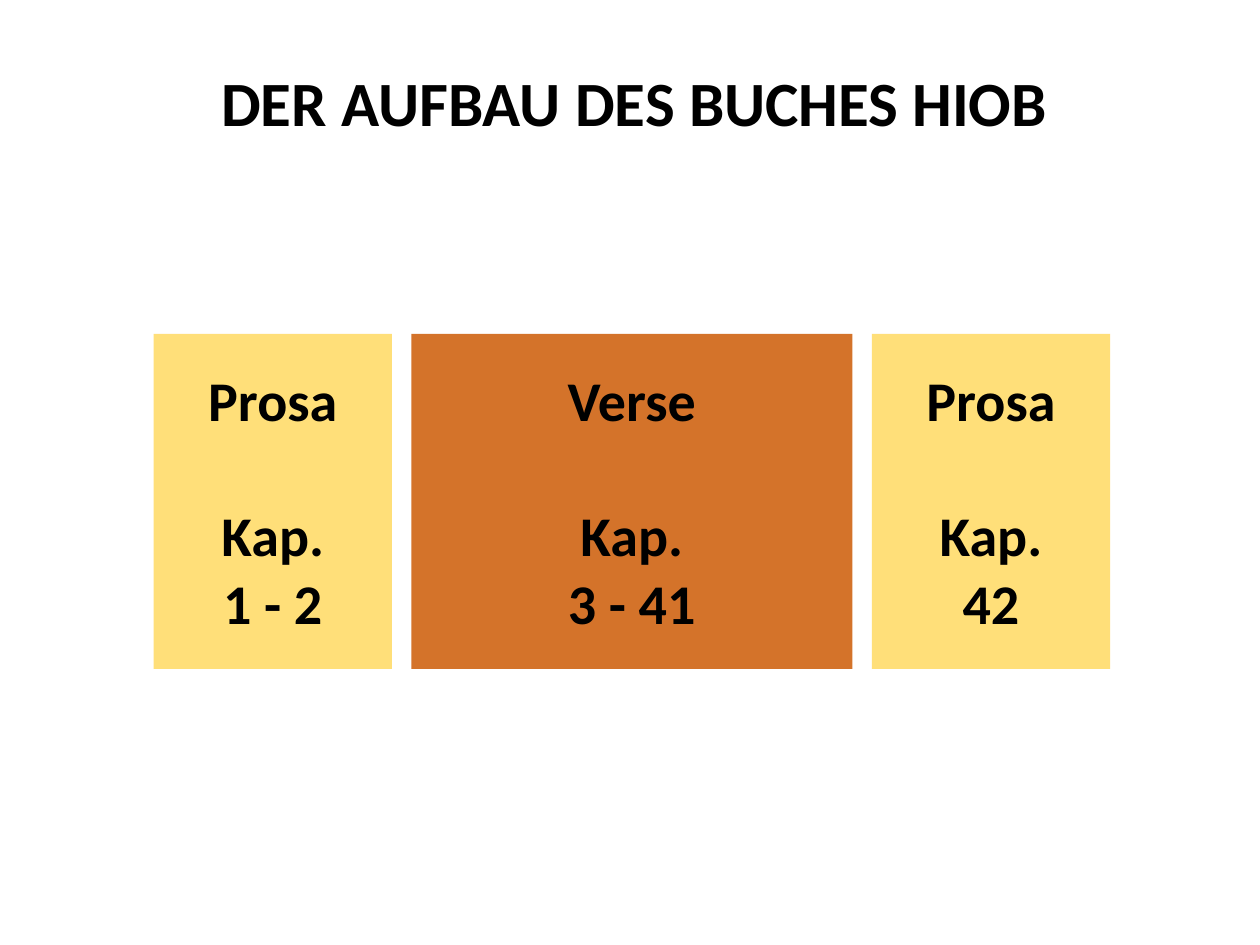
"""Build a slide showing the three-part structure of the Book of Job."""
from dataclasses import dataclass

import pptx
import pptx.dml.color
import pptx.enum.shapes
import pptx.enum.text
import pptx.oxml.ns
import pptx.util
from lxml import etree
from pptx.util import Inches


@dataclass(frozen=True)
class Theme:
    font: str = "Calibri"
    text: str = "000000"
    background: str = "FFFFFF"
    prose: str = "FFDF79"
    verse: str = "D4732A"
    title_size: int = 36
    body_size: int = 32
    form_gap: int = 39


@dataclass(frozen=True)
class Section:
    form: str
    chapters: str
    width: float
    color: str


THEME = Theme()
SECTIONS = [
    Section("Prosa", "1 - 2", 1.89, THEME.prose),
    Section("Verse", "3 - 41", 3.5, THEME.verse),
    Section("Prosa", "42", 1.89, THEME.prose),
]
LEFT, TOP, HEIGHT, GAP = 1.22, 2.65, 2.66, 0.155


def rgb(color: str) -> pptx.dml.color.RGBColor:
    """Return the color object for a hex value."""
    return pptx.dml.color.RGBColor.from_string(color)


def set_values(target: object, values: dict) -> None:
    """Set each named attribute on the target."""
    for name, value in values.items():
        setattr(target, name, value)


def fill_shape(shape, color: str) -> None:
    """Give the shape a solid fill."""
    shape.fill.solid()
    shape.fill.fore_color.rgb = rgb(color)


def write_text(shape, lines: list[str], size: int, top_inset: float) -> None:
    """Write bold centred paragraphs from the top of the shape."""
    frame = shape.text_frame
    frame.text = "\n".join(lines)
    set_values(frame, {
        "word_wrap": True,
        "auto_size": pptx.enum.text.MSO_AUTO_SIZE.NONE,
        "vertical_anchor": pptx.enum.text.MSO_ANCHOR.TOP,
        "margin_top": Inches(top_inset),
    })
    for paragraph in frame.paragraphs:
        paragraph.alignment = pptx.enum.text.PP_ALIGN.CENTER
        for run in paragraph.runs:
            set_values(run.font, {
                "name": THEME.font, "size": pptx.util.Pt(size), "bold": True,
            })
            run.font.color.rgb = rgb(THEME.text)


def add_title(slide, text: str) -> None:
    """Place the title on a translucent white band."""
    title = slide.shapes.title
    set_values(title, {
        "left": Inches(0.43), "top": Inches(0.44),
        "width": Inches(9.21), "height": Inches(0.63),
    })
    fill_shape(title, THEME.background)
    color = title.element.spPr.find(".//" + pptx.oxml.ns.qn("a:srgbClr"))
    etree.SubElement(color, pptx.oxml.ns.qn("a:alpha"), val="60000")
    write_text(title, [text], THEME.title_size, 0.06)


def add_section(slide, section: Section, left: float) -> None:
    """Draw one section of the book as a coloured block."""
    shape = slide.shapes.add_shape(
        pptx.enum.shapes.MSO_SHAPE.RECTANGLE,
        Inches(left), Inches(TOP), Inches(section.width), Inches(HEIGHT))
    shape.shadow.inherit = False
    shape.line.fill.background()
    fill_shape(shape, section.color)
    lines = [section.form, "Kap.", section.chapters]
    write_text(shape, lines, THEME.body_size, 0.25)
    shape.text_frame.paragraphs[0].space_after = pptx.util.Pt(THEME.form_gap)


def main() -> None:
    """Create and save the presentation."""
    presentation = pptx.Presentation()
    set_values(presentation, {
        "slide_width": Inches(10), "slide_height": Inches(7.5),
    })
    slide = presentation.slides.add_slide(presentation.slide_layouts[5])
    add_title(slide, "DER AUFBAU DES BUCHES HIOB")
    left = LEFT
    for section in SECTIONS:
        add_section(slide, section, left)
        left += section.width + GAP
    presentation.save("out.pptx")


if __name__ == "__main__":
    main()
